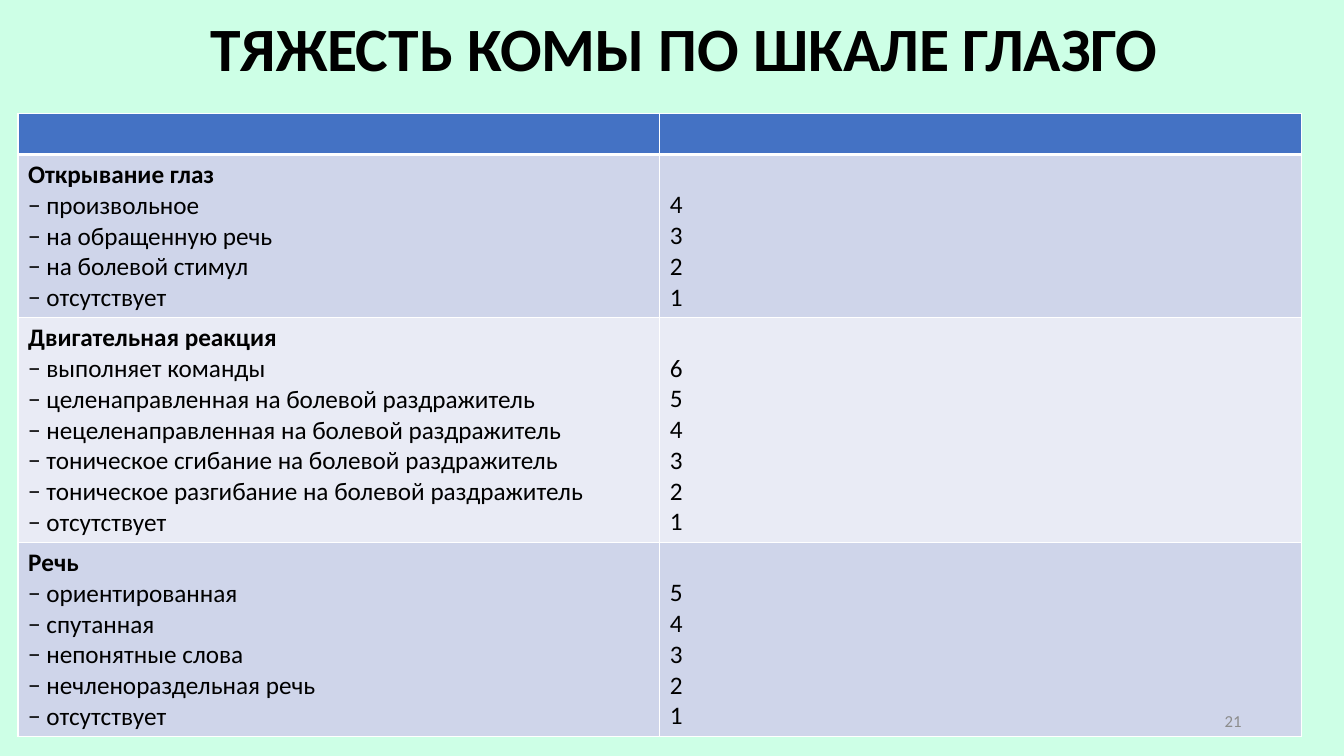
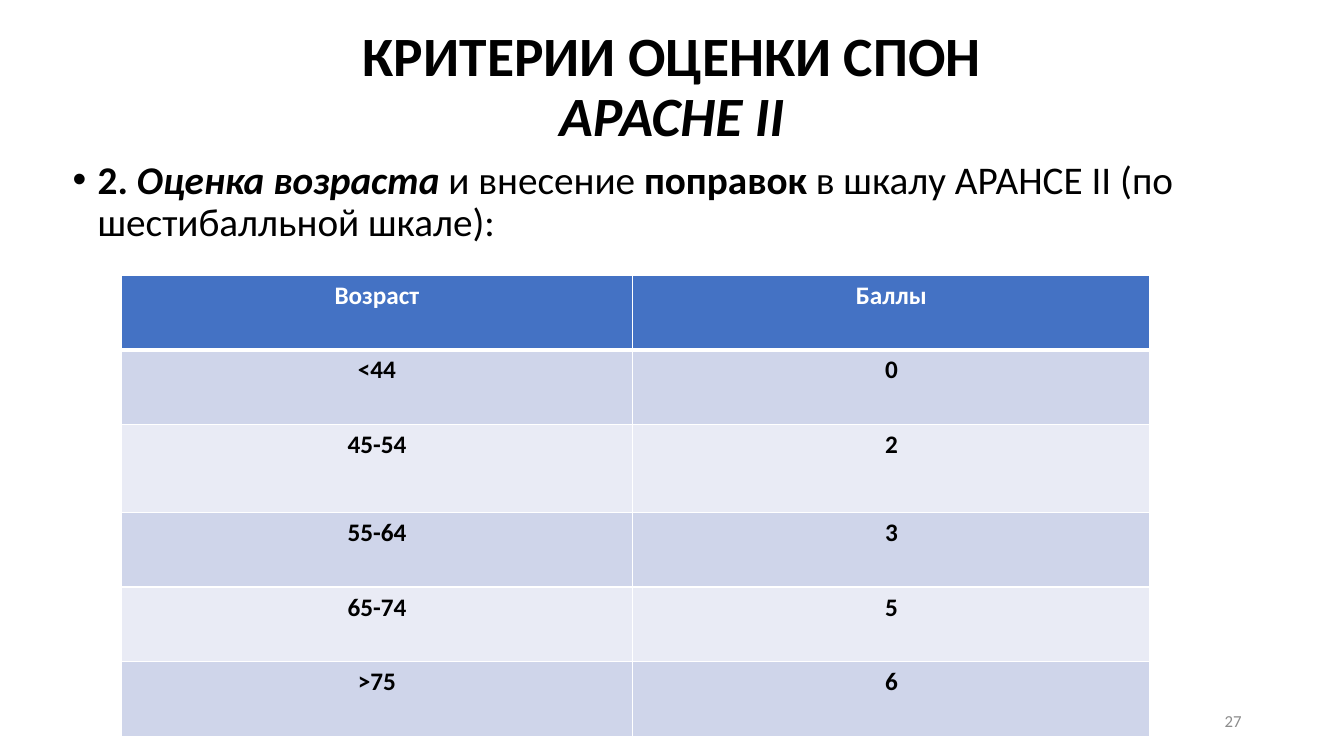
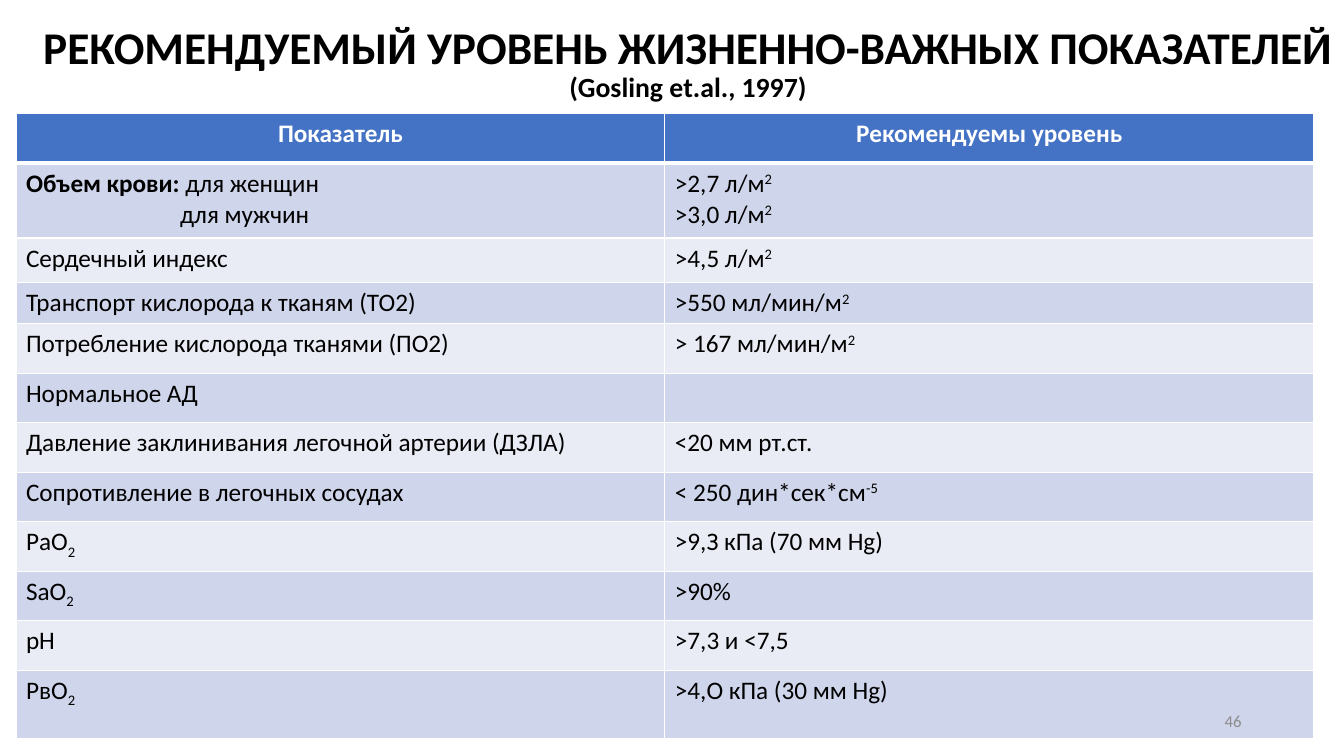
import dataclasses

import pptx
import pptx.dml.color
import pptx.enum.text
import pptx.oxml.ns
import pptx.util
from lxml import etree

ALIGN = pptx.enum.text.PP_ALIGN
ANCHOR = pptx.enum.text.MSO_ANCHOR
SLIDE_WIDTH = pptx.util.Inches(13.33)
SLIDE_HEIGHT = pptx.util.Inches(7.5)
GRID_COLUMNS = 32
GRID_ROWS = 18
LINE_BREAK = "\n"


@dataclasses.dataclass(frozen=True)
class Theme:
    font: str = "Calibri"
    ink: str = "000000"
    white: str = "FFFFFF"
    mint: str = "CDFFE6"
    header: str = "4472C4"
    bands: tuple = ("CFD5EA", "E9EBF5")
    number_ink: str = "8C8C8C"
    title_large: float = 44
    title_medium: float = 39.6
    title_small: float = 32.4
    subtitle: float = 19.8
    body: float = 28
    cell: float = 18
    number: float = 12
    line_spacing: float = 0.9
    border: float = 1
    header_border: float = 3


THEME = Theme()


@dataclasses.dataclass(frozen=True)
class Piece:
    text: str
    bold: bool = False
    italic: bool = False
    baseline: int = 0
    size: float = 0


def columns(count):
    return round(SLIDE_WIDTH * count / GRID_COLUMNS)


def rows(count):
    return round(SLIDE_HEIGHT * count / GRID_ROWS)


def color(value):
    return pptx.dml.color.RGBColor.from_string(value)


def raised(text, exponent):
    return [Piece(text), Piece(exponent, baseline=30000)]


def lowered(text, index):
    return [Piece(text), Piece(index, baseline=-25000)]


def add_runs(paragraph, pieces, size, ink=THEME.ink):
    for piece in pieces:
        if piece.text == LINE_BREAK:
            paragraph.add_line_break()
            continue
        run = paragraph.add_run()
        run.text = piece.text
        run.font.name = THEME.font
        run.font.size = pptx.util.Pt(piece.size or size)
        run.font.bold = piece.bold
        run.font.italic = piece.italic
        run.font.color.rgb = color(ink)
        if piece.baseline:
            run._r.get_or_add_rPr().set("baseline", str(piece.baseline))


def set_indent(paragraph, left, first=0):
    properties = paragraph._p.get_or_add_pPr()
    properties.set("marL", str(left))
    properties.set("indent", str(first))
    return properties


def add_text(slide, area, pieces, size, alignment, anchor=ANCHOR.MIDDLE, ink=THEME.ink):
    left, top, width, height = area
    shape = slide.shapes.add_textbox(columns(left), rows(top), columns(width), rows(height))
    frame = shape.text_frame
    frame.word_wrap = True
    frame.vertical_anchor = anchor
    paragraph = frame.paragraphs[0]
    paragraph.alignment = alignment
    add_runs(paragraph, pieces, size, ink)
    return paragraph


def add_title(slide, area, pieces, size):
    paragraph = add_text(slide, area, pieces, size, ALIGN.CENTER)
    paragraph.line_spacing = THEME.line_spacing


def add_bullet(slide, area, pieces):
    paragraph = add_text(slide, area, pieces, THEME.body, ALIGN.LEFT, ANCHOR.TOP)
    paragraph.line_spacing = THEME.line_spacing
    paragraph.space_before = pptx.util.Pt(10)
    indent = pptx.util.Inches(0.25)
    properties = set_indent(paragraph, indent, -indent)
    etree.SubElement(properties, pptx.oxml.ns.qn("a:buFont")).set("typeface", "Arial")
    etree.SubElement(properties, pptx.oxml.ns.qn("a:buChar")).set("char", "•")


def add_number(slide, number):
    add_text(slide, (22.6, 16.68, 7.2, 0.96), [Piece(number)], THEME.number,
             ALIGN.RIGHT, ink=THEME.number_ink)


def set_borders(cell, row_index):
    widths = {"a:lnL": THEME.border, "a:lnR": THEME.border,
              "a:lnT": THEME.header_border if row_index == 1 else THEME.border,
              "a:lnB": THEME.header_border if row_index == 0 else THEME.border}
    properties = cell._tc.get_or_add_tcPr()
    for tag, width in widths.items():
        line = etree.SubElement(properties, pptx.oxml.ns.qn(tag))
        line.set("w", str(pptx.util.Pt(width)))
        fill = etree.SubElement(line, pptx.oxml.ns.qn("a:solidFill"))
        etree.SubElement(fill, pptx.oxml.ns.qn("a:srgbClr")).set("val", THEME.white)


def fill_cell(cell, row_index, lines, alignment):
    set_borders(cell, row_index)
    is_header = row_index == 0
    cell.fill.solid()
    cell.fill.fore_color.rgb = color(
        THEME.header if is_header else THEME.bands[(row_index - 1) % 2])
    frame = cell.text_frame
    for index, pieces in enumerate(lines):
        paragraph = frame.add_paragraph() if index else frame.paragraphs[0]
        paragraph.alignment = ALIGN.CENTER if is_header else alignment
        add_runs(paragraph, pieces, THEME.cell, THEME.white if is_header else THEME.ink)


def add_table(slide, left, top, widths, heights, content, alignment=ALIGN.LEFT):
    frame = slide.shapes.add_table(len(heights), len(widths), columns(left), rows(top),
                                   columns(sum(widths)), rows(sum(heights)))
    table = frame.table
    table.horz_banding = False
    for column, width in zip(table.columns, widths):
        column.width = columns(width)
    for row_index, (row, height) in enumerate(zip(table.rows, heights)):
        row.height = rows(height)
        for cell, lines in zip(row.cells, content[row_index]):
            fill_cell(cell, row_index, lines, alignment)
    return table


def add_slide(presentation, background=THEME.white):
    slide = presentation.slides.add_slide(presentation.slide_layouts[6])
    slide.background.fill.solid()
    slide.background.fill.fore_color.rgb = color(background)
    return slide


def build_coma_scale(presentation):
    slide = add_slide(presentation, THEME.mint)
    add_title(slide, (1.03, 0, 30.55, 2.45),
              [Piece("ТЯЖЕСТЬ КОМЫ ПО ШКАЛЕ ГЛАЗГО", bold=True)], THEME.title_large)
    reactions = {
        "Открывание глаз": ["произвольное", "на обращенную речь", "на болевой стимул",
                            "отсутствует"],
        "Двигательная реакция": ["выполняет команды",
                                 "целенаправленная на болевой раздражитель",
                                 "нецеленаправленная на болевой раздражитель",
                                 "тоническое сгибание на болевой раздражитель",
                                 "тоническое разгибание на болевой раздражитель",
                                 "отсутствует"],
        "Речь": ["ориентированная", "спутанная", "непонятные слова",
                 "нечленораздельная речь", "отсутствует"],
    }
    content = [[[], []]]
    heights = [0.97]
    for heading, answers in reactions.items():
        labels = [[Piece(heading, bold=True)]] + [[Piece(f"− {answer}")] for answer in answers]
        scores = [[Piece(str(score))] for score in range(len(answers), 0, -1)]
        content.append([labels, scores])
        heights.append(0.24 + 0.73 * len(labels))
    table = add_table(slide, 0.43, 2.71, [15.28] * 2, heights, content)
    for row_index in range(1, len(heights)):
        table.cell(row_index, 1).vertical_anchor = ANCHOR.BOTTOM
    add_number(slide, "21")


def build_age_score(presentation):
    slide = add_slide(presentation)
    add_title(slide, (2.2, 0.43, 27.6, 3.34),
              [Piece("КРИТЕРИИ ОЦЕНКИ СПОН", bold=True), Piece(LINE_BREAK),
               Piece("АРАСНЕ II", bold=True, italic=True)], THEME.title_medium)
    add_bullet(slide, (1.49, 3.7, 28.3, 13.94),
               [Piece("2. ", bold=True), Piece("Оценка возраста ", bold=True, italic=True),
                Piece("и внесение "), Piece("поправок", bold=True),
                Piece(" в шкалу АРАНСЕ II (по шестибалльной шкале):")])
    scores = [("Возраст", "Баллы"), ("<44", "0"), ("45-54", "2"), ("55-64", "3"),
              ("65-74", "5"), (">75", "6")]
    content = [[[[Piece(text, bold=True)]] for text in pair] for pair in scores]
    add_table(slide, 2.88, 6.55, [12.19, 12.31], [1.78] * 2 + [2.09] + [1.78] * 3,
              content, ALIGN.CENTER)
    add_number(slide, "27")


def build_vital_signs(presentation):
    slide = add_slide(presentation)
    add_title(slide, (0.38, 0, 32, 3.07),
              [Piece("РЕКОМЕНДУЕМЫЙ УРОВЕНЬ ЖИЗНЕННО-ВАЖНЫХ ПОКАЗАТЕЛЕЙ", bold=True),
               Piece(LINE_BREAK),
               Piece("(Gosling еt.аl., 1997)", bold=True, size=THEME.subtitle)],
              THEME.title_small)
    single_lines = [
        ([Piece("Сердечный индекс")], raised(">4,5 л/м", "2")),
        ([Piece("Транспорт кислорода к тканям (ТО2)")], raised(">550 мл/мин/м", "2")),
        ([Piece("Потребление кислорода тканями (ПО2)")], raised("> 167 мл/мин/м", "2")),
        ([Piece("Нормальное АД")], []),
        ([Piece("Давление заклинивания легочной артерии (ДЗЛА)")], [Piece("<20 мм рт.ст.")]),
        ([Piece("Сопротивление в легочных сосудах")], raised("< 250 дин*сек*см", "-5")),
        (lowered("РаО", "2"), [Piece(">9,З кПа (70 мм Hg)")]),
        (lowered("SаО", "2"), [Piece(">90%")]),
        ([Piece("рН")], [Piece(">7,3 и <7,5")]),
        (lowered("РвО", "2"), [Piece(">4,О кПа (30 мм Hg)")]),
    ]
    content = [
        [[[Piece("Показатель", bold=True)]], [[Piece("Рекомендуемы уровень", bold=True)]]],
        [[[Piece("Объем крови: ", bold=True), Piece("для женщин")], [Piece("для мужчин")]],
         [raised(">2,7 л/м", "2"), raised(">3,0 л/м", "2")]],
    ] + [[[label], [level]] for label, level in single_lines]
    heights = [1.18, 1.78, 1.06, 0.98] + [1.18] * 7 + [1.63]
    table = add_table(slide, 0.38, 2.71, [15.45] * 2, heights, content)
    set_indent(table.cell(1, 0).text_frame.paragraphs[1], columns(3.67))
    add_number(slide, "46")


def main():
    presentation = pptx.Presentation()
    presentation.slide_width = SLIDE_WIDTH
    presentation.slide_height = SLIDE_HEIGHT
    build_coma_scale(presentation)
    build_age_score(presentation)
    build_vital_signs(presentation)
    presentation.save("out.pptx")


if __name__ == "__main__":
    main()
